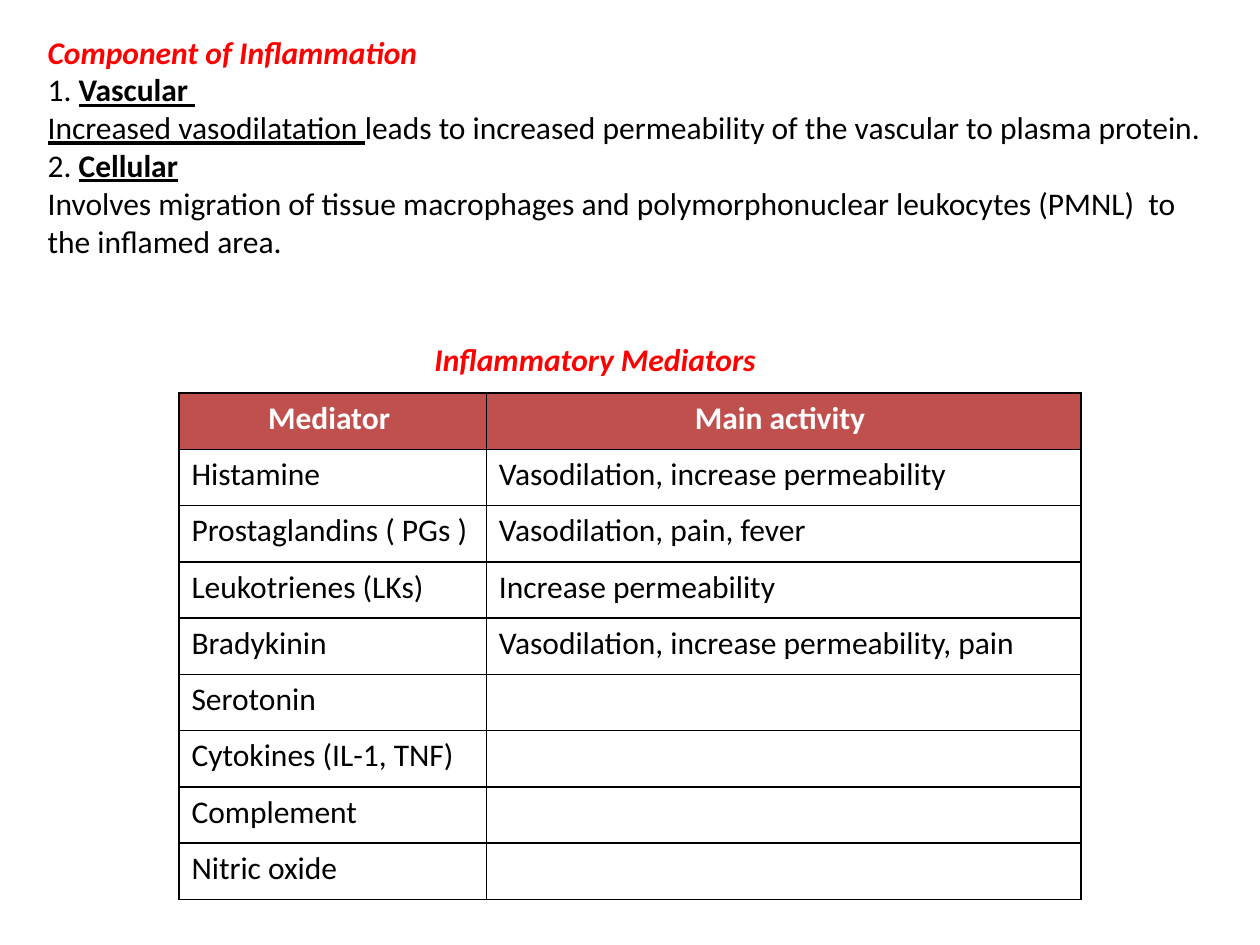
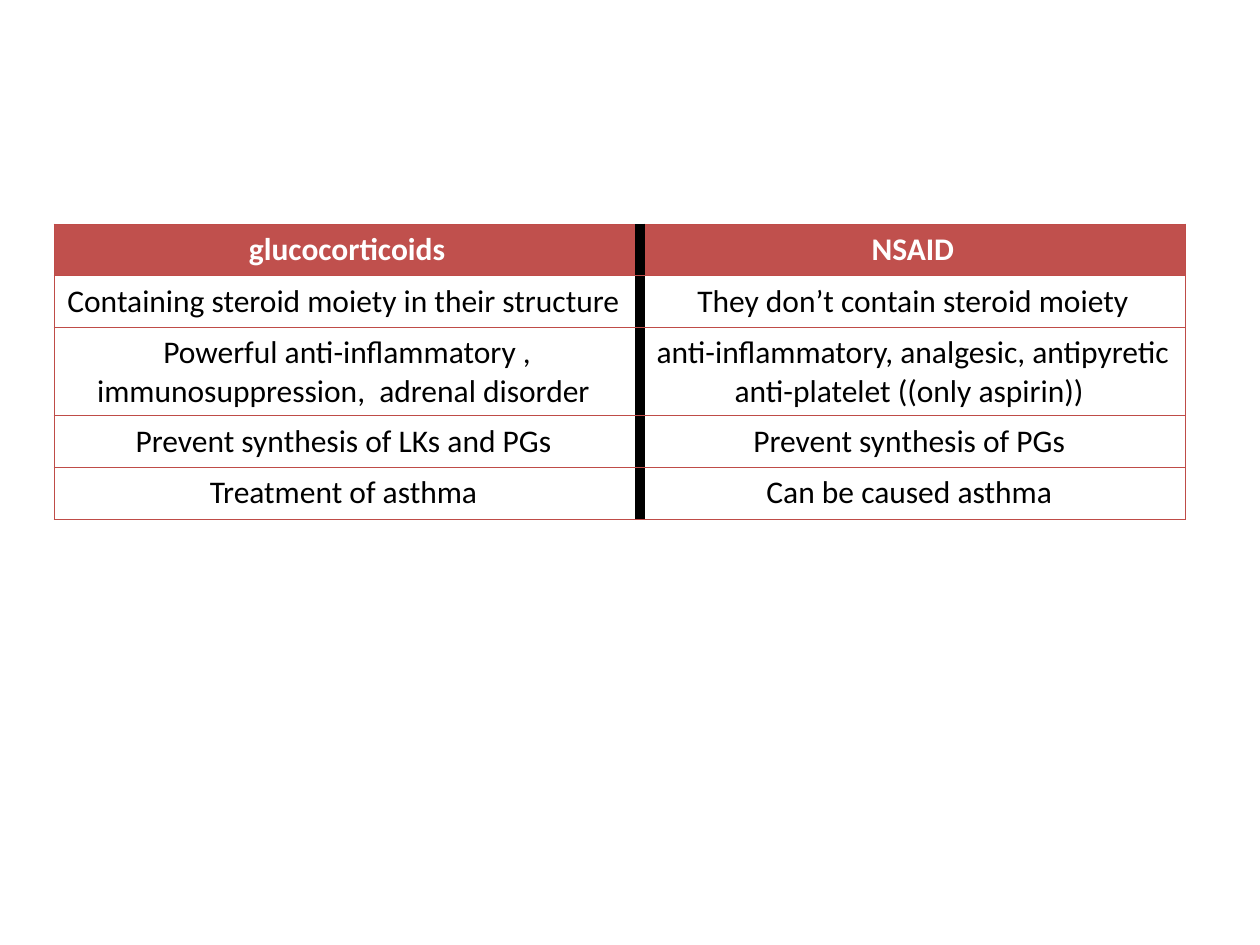
from lxml.etree import SubElement
from pptx import Presentation
from pptx.dml.color import RGBColor
from pptx.enum.text import PP_ALIGN as Align
from pptx.oxml.ns import qn
from pptx.util import Inches, Pt

COLORS = {"title": "FF0000", "body": "000000", "header_text": "FFFFFF",
          "header_fill": "C0504D", "rule": "BF4C48", "divider": "000000"}
FONT = "Calibri"
TITLE = {"color": "title", "bold": True, "italic": True}
TERM = {"bold": True, "underline": True}

COMPONENTS = [
    [("Component of Inflammation", TITLE)],
    [("1. ", {}), ("Vascular ", TERM)],
    [("Increased vasodilatation ", {"underline": True}),
     ("leads to increased permeability of the vascular to plasma protein.", {})],
    [("2. ", {}), ("Cellular", TERM)],
    [("Involves migration of tissue macrophages and polymorphonuclear "
      "leukocytes (PMNL)  to the inflamed area.", {})],
]
MEDIATORS = [
    ("Mediator ", "Main activity "),
    ("Histamine", "Vasodilation, increase permeability"),
    ("Prostaglandins ( PGs )", "Vasodilation, pain, fever"),
    ("Leukotrienes (LKs)", "Increase permeability"),
    ("Bradykinin", "Vasodilation, increase permeability, pain"),
    ("Serotonin", ""),
    ("Cytokines (IL-1, TNF)", ""),
    ("Complement", ""),
    ("Nitric oxide", ""),
]
DRUG_CLASSES = [
    ("glucocorticoids", "NSAID"),
    ("Containing steroid moiety in their structure ",
     "They don’t contain steroid moiety"),
    ("Powerful anti-inflammatory , immunosuppression,  adrenal disorder ",
     "anti-inflammatory, analgesic, antipyretic anti-platelet ((only aspirin)) "),
    ("Prevent synthesis of LKs and PGs ", "Prevent synthesis of PGs "),
    ("Treatment of asthma ", "Can be caused asthma "),
]


def write(paragraph, text, color="body", bold=False, italic=False,
          underline=False, size=18):
    run = paragraph.add_run()
    run.text = text
    font = run.font
    font.name, font.size = FONT, Pt(size)
    font.bold, font.italic, font.underline = bold, italic, underline
    font.color.rgb = RGBColor.from_string(COLORS[color])


def add_text_block(slide, left, top, width, height, paragraphs):
    frame = slide.shapes.add_textbox(
        Inches(left), Inches(top), Inches(width), Inches(height)).text_frame
    frame.word_wrap = True
    for index, runs in enumerate(paragraphs):
        paragraph = frame.add_paragraph() if index else frame.paragraphs[0]
        for text, style in runs:
            write(paragraph, text, **style)


def set_borders(cell, borders):
    properties = cell._tc.get_or_add_tcPr()
    for side in "LRTB":
        color, points = borders[side]
        line = SubElement(properties, qn(f"a:ln{side}"), w=str(Pt(points)))
        fill = SubElement(line, qn("a:solidFill"))
        SubElement(fill, qn("a:srgbClr"), val=COLORS[color])


def add_grid(slide, left, top, widths, row_height, rows, border,
             divider, body_align):
    table = slide.shapes.add_table(
        len(rows), len(widths), Inches(left), Inches(top),
        Inches(sum(widths)), Inches(row_height * len(rows))).table
    table.first_row = table.horz_banding = False
    for column, width in zip(table.columns, widths):
        column.width = Inches(width)
    for r, values in enumerate(rows):
        for c, text in enumerate(values):
            cell = table.cell(r, c)
            borders = dict.fromkeys("LRTB", border)
            if c > 0:
                borders["L"] = divider
            if c < len(widths) - 1:
                borders["R"] = divider
            set_borders(cell, borders)
            paragraph = cell.text_frame.paragraphs[0]
            if r == 0:
                cell.fill.solid()
                cell.fill.fore_color.rgb = RGBColor.from_string(COLORS["header_fill"])
                paragraph.alignment = Align.CENTER
                write(paragraph, text, color="header_text", bold=True)
            else:
                cell.fill.background()
                paragraph.alignment = body_align
                if text:
                    write(paragraph, text)


def build_mediators(slide):
    add_text_block(slide, 0.28, 0.21, 9.45, 2.22, COMPONENTS)
    thin = ("divider", 1)
    add_grid(slide, 1.42, 3.12, (2.44, 4.72), 4.02 / len(MEDIATORS),
             MEDIATORS, thin, thin, Align.LEFT)
    add_text_block(slide, 3.35, 2.65, 3.23, 0.4,
                   [[("Inflammatory Mediators", TITLE)]])


def build_drug_comparison(slide):
    add_grid(slide, 0.43, 1.78, (4.65, 4.33), 0.41, DRUG_CLASSES,
             ("rule", 0.75), ("divider", 6), Align.CENTER)


def main():
    deck = Presentation()
    deck.slide_width, deck.slide_height = Inches(10), Inches(7.5)
    for build in (build_mediators, build_drug_comparison):
        build(deck.slides.add_slide(deck.slide_layouts[6]))
    deck.save("out.pptx")


if __name__ == "__main__":
    main()
